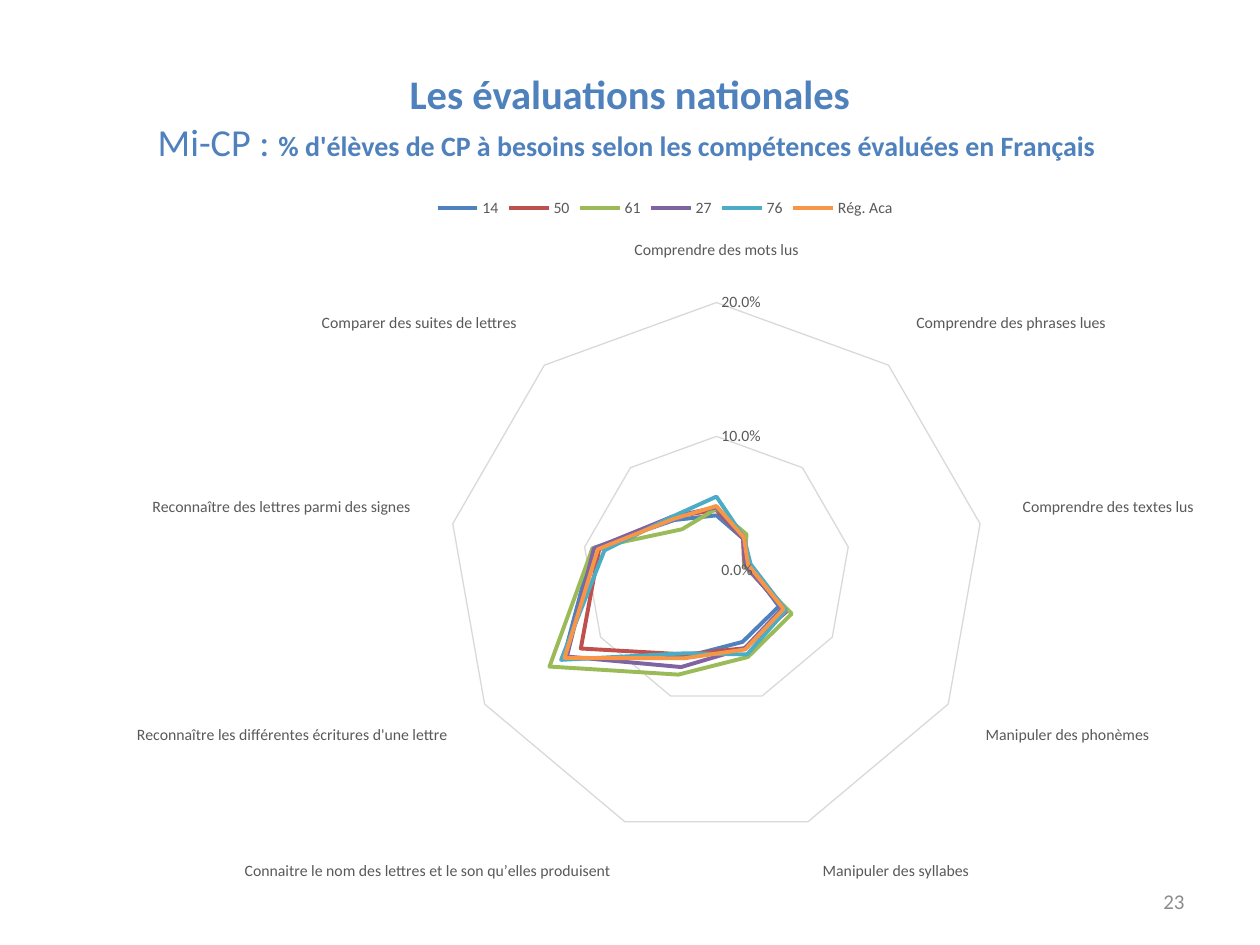
from pptx import Presentation
from pptx import util as u
from pptx.chart.data import CategoryChartData
from pptx.dml.color import RGBColor
from pptx.enum import chart as ch, text as tx

FONT = "Calibri"
BLUE = "4F81BD"
GREY = "595959"
PALE = "D9D9D9"
SKILLS = [
    "Comprendre des mots lus",
    "Comprendre des phrases lues",
    "Comprendre des textes lus",
    "Manipuler des phonèmes",
    "Manipuler des syllabes",
    "Connaitre le nom des lettres et le son qu’elles produisent",
    "Reconnaître les différentes écritures d'une lettre",
    "Reconnaître des lettres parmi des signes",
    "Comparer des suites de lettres",
]
RATES = [
    ("14", BLUE, [4.1, 3.1, 2.4, 5.4, 5.7, 6.9, 13.2, 9.4, 4.9]),
    ("50", "C0504D", [4.5, 3.1, 2.1, 6.1, 6.2, 6.7, 11.7, 8.9, 5.2]),
    ("61", "9BBB59", [4.6, 3.5, 2.1, 6.5, 6.9, 8.3, 14.4, 9.4, 4]),
    ("27", "8064A2", [4.7, 3.1, 2.2, 5.7, 6.2, 7.7, 12.9, 9.3, 5.2]),
    ("76", "4BACC6", [5.5, 3.2, 2.6, 6, 6.7, 6.6, 13.4, 8.5, 5.2]),
    ("Rég. Aca", "F79646", [4.8, 3.2, 2.4, 5.8, 6.3, 7, 13.1, 9, 5]),
]


def color(code):
    """Turn a hex string into a colour."""
    return RGBColor.from_string(code)


def style(font, size, code, bold=False):
    """Set the face, size, colour and weight of a font."""
    font.name, font.size, font.bold = FONT, u.Pt(size), bold
    font.color.rgb = color(code)


def stroke(line, code, width):
    """Set the colour and width of a line."""
    line.color.rgb = color(code)
    line.width = u.Pt(width)


def write(para, words, size=12, code=BLUE, bold=False):
    """Add a formatted run to a paragraph."""
    run = para.add_run()
    run.text = words
    style(run.font, size, code, bold)


def add_box(slide, left, top, width, height, align):
    """Add a wrapped, middle-anchored text box and return its paragraph."""
    box = slide.shapes.add_textbox(*map(u.Cm, (left, top, width, height)))
    frame = box.text_frame
    frame.word_wrap = True
    frame.vertical_anchor = tx.MSO_ANCHOR.MIDDLE
    para = frame.paragraphs[0]
    para.alignment = align
    return para


def add_title(slide):
    """Add the two-line heading."""
    para = add_box(slide, 1.27, 0.76, 22.86, 3.18, tx.PP_ALIGN.CENTER)
    write(para, "Les évaluations nationales", size=23.2, bold=True)
    para.add_line_break()
    write(para, "Mi-CP : ", size=21.8)
    write(para, "% d'élèves de CP à besoins selon les compétences évaluées en Français ",
          size=16, bold=True)


def add_radar(slide):
    """Add the radar chart of pupils in need by skill."""
    data = CategoryChartData(number_format="0.0%")
    data.categories = SKILLS
    for name, _, rates in RATES:
        data.add_series(name, [round(rate / 100, 3) for rate in rates])
    place = map(u.Cm, (2.31, 3.73, 22.2, 14.4))
    chart = slide.shapes.add_chart(ch.XL_CHART_TYPE.RADAR, *place, data).chart
    style(chart.font, 10, "000000")
    chart.has_title = False
    chart.has_legend = True
    chart.legend.position = ch.XL_LEGEND_POSITION.TOP
    chart.legend.include_in_layout = False
    style(chart.legend.font, 9, GREY)
    for line, (_, code, _) in zip(chart.plots[0].series, RATES):
        line.smooth = False
        stroke(line.format.line, code, 2.25)
    set_axes(chart.category_axis, chart.value_axis)


def set_axes(cat, val):
    """Format the spokes and the rings of the radar."""
    for axis in (cat, val):
        axis.major_tick_mark = axis.minor_tick_mark = ch.XL_TICK_MARK.NONE
        style(axis.tick_labels.font, 9, GREY)
    cat.has_major_gridlines = False
    stroke(cat.format.line, PALE, 0.75)
    val.minimum_scale, val.maximum_scale, val.major_unit = 0, 0.2, 0.1
    val.has_major_gridlines = True
    stroke(val.major_gridlines.format.line, PALE, 0.75)
    val.format.line.fill.background()
    val.tick_labels.number_format = "0.0%"
    val.tick_labels.number_format_is_linked = False


def main():
    """Build the slide and save it."""
    deck = Presentation()
    deck.slide_width, deck.slide_height = u.Cm(25.4), u.Cm(19.05)
    slide = deck.slides.add_slide(deck.slide_layouts[6])
    page = add_box(slide, 18.2, 17.66, 5.93, 1.01, tx.PP_ALIGN.RIGHT)
    write(page, "23", code="8C8C8C")
    add_title(slide)
    add_radar(slide)
    deck.save("out.pptx")


if __name__ == "__main__":
    main()
